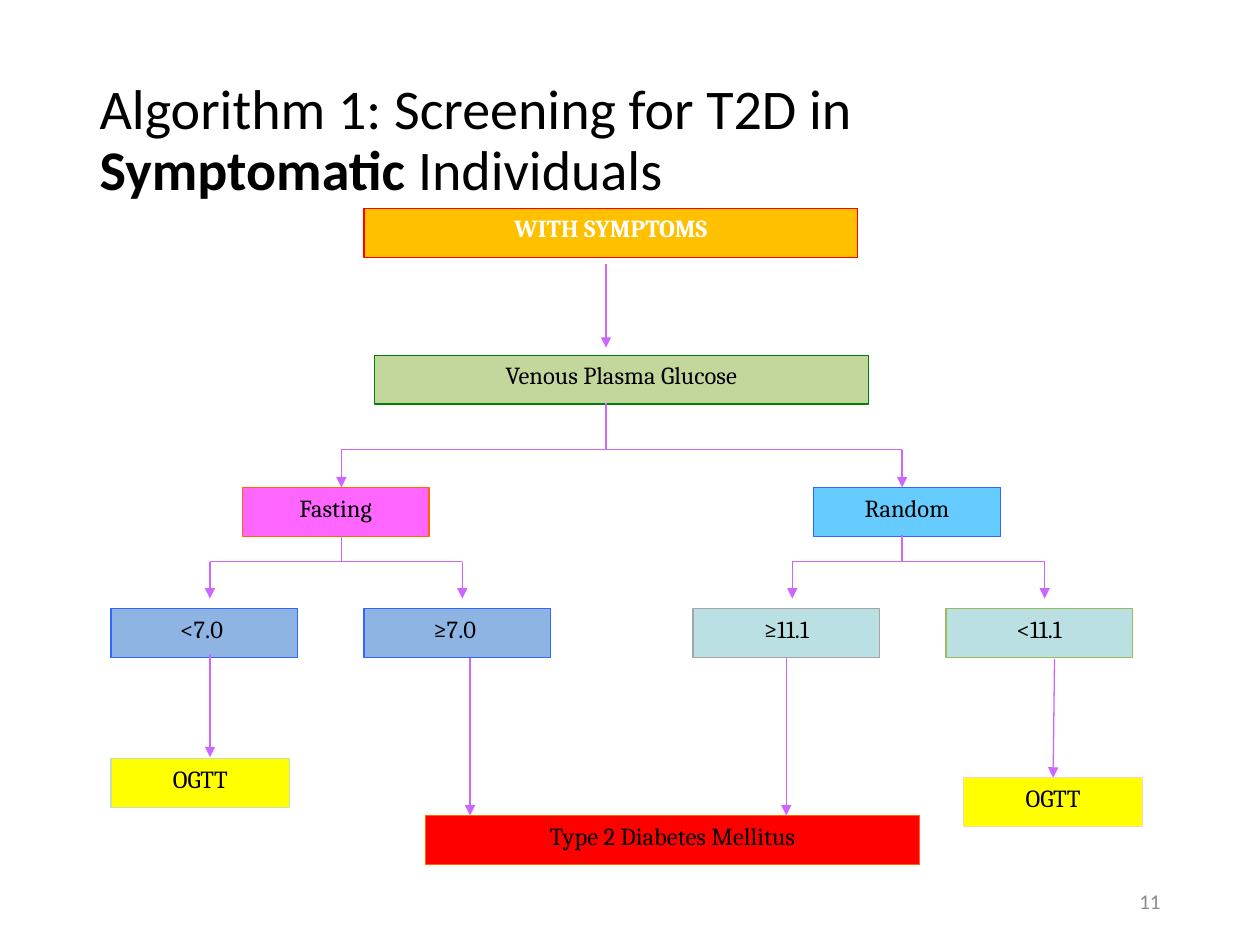
"""Build the slide with the screening flowchart for symptomatic individuals."""
from dataclasses import dataclass

from lxml import etree
from pptx import Presentation
from pptx.dml.color import RGBColor
from pptx.enum.shapes import MSO_CONNECTOR, MSO_SHAPE
from pptx.enum.text import MSO_ANCHOR, MSO_AUTO_SIZE, PP_ALIGN
from pptx.oxml.ns import qn
from pptx.util import Pt

STRAIGHT = MSO_CONNECTOR.STRAIGHT
RECTANGLE = MSO_SHAPE.RECTANGLE
TOP, MIDDLE = MSO_ANCHOR.TOP, MSO_ANCHOR.MIDDLE
LEFT, CENTER, RIGHT = PP_ALIGN.LEFT, PP_ALIGN.CENTER, PP_ALIGN.RIGHT
NO_AUTOFIT = MSO_AUTO_SIZE.NONE
TOP_SIDE, BOTTOM_SIDE = 0, 2
TITLE_ONLY = 5
WIDE, MEDIUM, SMALL = 282.2, 106.6, 102.2


@dataclass(frozen=True)
class Theme:
    """Colours, fonts and sizes of the slide."""
    heading_font: str = "Calibri"
    box_font: str = "Cambria"
    title_size: float = 32
    box_size: float = 14
    number_size: float = 12
    line_width: float = 0.75
    box_height: float = 28
    black: str = "000000"
    white: str = "FFFFFF"
    gray: str = "8C8C8C"
    arrow: str = "CC66FF"
    amber: str = "FFC000"
    green: str = "C3D69B"
    dark_green: str = "008000"
    pink: str = "FF66FF"
    sky: str = "66CCFF"
    blue: str = "8EB4E3"
    dark_blue: str = "3366FF"
    teal: str = "BBE0E3"
    silver: str = "A5A5A5"
    olive: str = "9BBB59"
    yellow: str = "FFFF00"
    mint: str = "C5E0B4"
    peach: str = "FCD5B5"
    red: str = "FF0000"
    orange: str = "FF6600"


class FlowSlide:
    """Draws the elements of a flowchart on one slide."""

    def __init__(self, slide, theme):
        self.slide = slide
        self.theme = theme

    def add_run(self, paragraph, text, font, size, color, bold=False):
        """Append one formatted run to a paragraph."""
        run = paragraph.add_run()
        run.text = text
        run.font.name = font
        run.font.size = Pt(size)
        run.font.bold = bold
        run.font.color.rgb = RGBColor.from_string(color)

    def frame_paragraph(self, shape, anchor, alignment):
        """Prepare a text frame and return its first paragraph."""
        frame = shape.text_frame
        frame.word_wrap = True
        frame.auto_size = NO_AUTOFIT
        frame.vertical_anchor = anchor
        paragraph = frame.paragraphs[0]
        paragraph.alignment = alignment
        return paragraph

    def title(self, parts, left, top, width, height):
        """Place the title and write its (text, bold) parts."""
        shape = self.slide.shapes.title
        shape.left, shape.top = Pt(left), Pt(top)
        shape.width, shape.height = Pt(width), Pt(height)
        paragraph = self.frame_paragraph(shape, MIDDLE, LEFT)
        paragraph.line_spacing = 0.9
        for text, bold in parts:
            self.add_run(paragraph, text, self.theme.heading_font,
                         self.theme.title_size, self.theme.black, bold)

    def page_number(self, text, left, top, width, height):
        """Write the page number."""
        shape = self.slide.shapes.add_textbox(Pt(left), Pt(top), Pt(width), Pt(height))
        paragraph = self.frame_paragraph(shape, MIDDLE, RIGHT)
        self.add_run(paragraph, text, self.theme.heading_font,
                     self.theme.number_size, self.theme.gray)

    def box(self, text, left, top, width, fill, outline, color=None, bold=False):
        """Draw a labelled rectangle and return it."""
        theme = self.theme
        shape = self.slide.shapes.add_shape(
            RECTANGLE, Pt(left), Pt(top), Pt(width), Pt(theme.box_height))
        shape.shadow.inherit = False
        shape.fill.solid()
        shape.fill.fore_color.rgb = RGBColor.from_string(fill)
        shape.line.color.rgb = RGBColor.from_string(outline)
        shape.line.width = Pt(theme.line_width)
        paragraph = self.frame_paragraph(shape, TOP, CENTER)
        frame = shape.text_frame
        frame.margin_left = frame.margin_right = Pt(6)
        frame.margin_top = frame.margin_bottom = Pt(3)
        self.add_run(paragraph, text, theme.box_font, theme.box_size,
                     color or theme.black, bold)
        return shape

    def line(self, start, end, arrow=False):
        """Draw a straight connector, with an arrowhead if asked, and return it."""
        connector = self.slide.shapes.add_connector(
            STRAIGHT, *(Pt(value) for value in (*start, *end)))
        connector.line.color.rgb = RGBColor.from_string(self.theme.arrow)
        connector.line.width = Pt(self.theme.line_width)
        if arrow:
            outline = connector.line._get_or_add_ln()
            etree.SubElement(outline, qn("a:tailEnd"), type="triangle")
        etree.SubElement(connector._element.spPr, qn("a:effectLst"))
        return connector

    def fork(self, stem, top, bar, tip, branches):
        """Draw a stem, a crossbar and an arrow down each branch."""
        self.line((stem, top), (stem, bar))
        self.line((branches[0], bar), (branches[-1], bar))
        for branch in branches:
            self.line((branch, bar), (branch, tip), arrow=True)


def main():
    """Build and save the presentation."""
    presentation = Presentation()
    presentation.slide_width, presentation.slide_height = Pt(720), Pt(540)
    slide = presentation.slides.add_slide(presentation.slide_layouts[TITLE_ONLY])
    theme = Theme()
    flow = FlowSlide(slide, theme)

    flow.page_number("11", 508.3, 500.4, 162, 28.8)
    flow.title([("Algorithm 1: Screening for T2D in ", False),
                ("Symptomatic", True), (" Individuals", False)],
               49.7, 28.8, 620.6, 104.4)

    flow.box("WITH SYMPTOMS", 208, 119, WIDE, theme.amber, theme.red, theme.white, True)
    flow.box("Venous Plasma Glucose", 214, 203, WIDE, theme.green, theme.dark_green)
    flow.box("Fasting", 138.5, 278.5, MEDIUM, theme.pink, theme.orange)
    flow.box("Random", 465, 278.5, MEDIUM, theme.sky, theme.dark_blue)

    results = {}
    for text, left, fill, outline in (
            ("<7.0 ", 63.4, theme.blue, theme.dark_blue),
            ("≥7.0 ", 208, theme.blue, theme.dark_blue),
            ("≥11.1", 396, theme.teal, theme.silver),
            ("<11.1", 540.5, theme.teal, theme.olive)):
        results[text] = flow.box(text, left, 347.8, MEDIUM, fill, outline)

    flow.box("OGTT", 63.4, 433.5, SMALL, theme.yellow, theme.mint)
    random_test = flow.box("OGTT", 550.7, 444.4, SMALL, theme.yellow, theme.peach)
    flow.box("Type 2 Diabetes Mellitus", 243.2, 466, WIDE, theme.red, theme.orange)

    center, fasting, random = 346.3, 195.1, 515.5
    flow.line((center, 151), (center, 198.7), arrow=True)
    flow.fork(center, 230.5, 257, 278.5, (fasting, random))
    flow.fork(fasting, 305.5, 321, 342, (120, 264.2))
    flow.fork(random, 305.5, 321, 342, (452.8, 597))

    flow.line((120, 374), (120, 432.7), arrow=True)
    flow.line((268.6, 375.8), (268.6, 466), arrow=True)
    diabetes_arrow = flow.line((449.3, 375.8), (449.3, 466), arrow=True)
    diabetes_arrow.begin_connect(results["≥11.1"], BOTTOM_SIDE)
    test_arrow = flow.line((602.6, 376.5), (601.8, 444.4), arrow=True)
    test_arrow.end_connect(random_test, TOP_SIDE)

    presentation.save("out.pptx")


if __name__ == "__main__":
    main()
